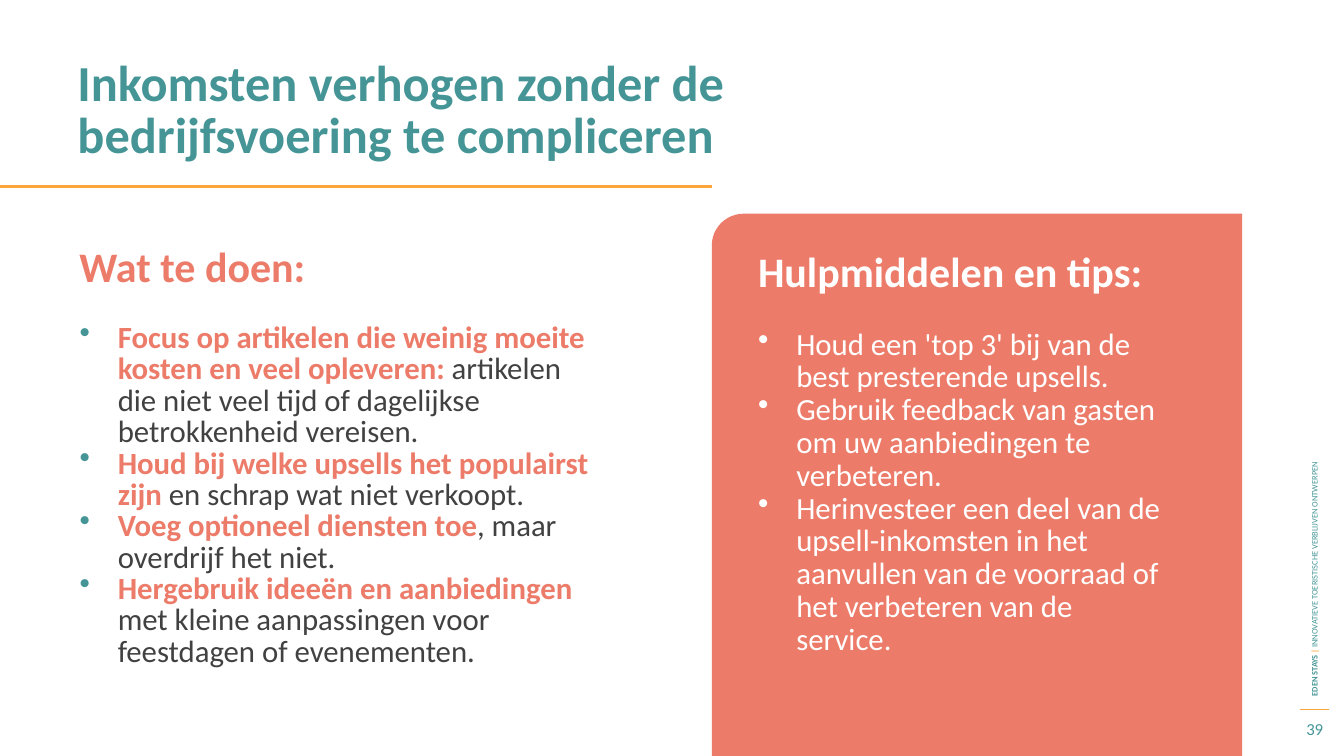
"""Build the slide on raising income without complicating operations."""
from pptx import Presentation
from pptx.dml.color import RGBColor as RGB
from pptx.enum.shapes import MSO_CONNECTOR as Link, MSO_SHAPE as Form
from pptx.enum.text import MSO_ANCHOR as Anchor, PP_ALIGN as Align
from pptx.oxml.ns import qn
from pptx.util import Pt
from lxml.etree import SubElement as sub

PX = 9144
FONT = "Calibri"
TEAL = RGB(0x45, 0x95, 0x97)
CORAL = RGB(0xEC, 0x7C, 0x69)
GOLD = RGB(0xFB, 0xA6, 0x3B)
GREY = RGB(0x41, 0x41, 0x41)
WHITE = RGB(0xFF, 0xFF, 0xFF)

TODOS = [
    ("Focus op artikelen die weinig moeite kosten en veel opleveren: ",
     "artikelen die niet veel tijd of dagelijkse betrokkenheid vereisen."),
    ("Houd bij welke upsells het populairst zijn ",
     "en schrap wat niet verkoopt."),
    ("Voeg optioneel diensten toe", ", maar overdrijf het niet."),
    ("Hergebruik ideeën en aanbiedingen ",
     "met kleine aanpassingen voor feestdagen of evenementen."),
]
TIPS = [
    "Houd een 'top 3' bij van de best presterende upsells.",
    "Gebruik feedback van gasten om uw aanbiedingen te verbeteren.",
    "Herinvesteer een deel van de upsell-inkomsten in het aanvullen "
    "van de voorraad of het verbeteren van de service.",
]


def scale(*nums):
    return [n * PX for n in nums]


def add_rule(slide, x1, x2, y, width):
    rule = slide.shapes.add_connector(Link.STRAIGHT, *scale(x1, y, x2, y))
    rule.line.color.rgb = GOLD
    rule.line.width = Pt(width)
    sub(rule._element.spPr, qn("a:effectLst"))


def add_panel(slide, *box):
    panel = slide.shapes.add_shape(Form.ROUND_1_RECTANGLE, *scale(*box))
    panel.adjustments[0] = 0.06
    panel.rotation = 270
    panel.shadow.inherit = False
    panel.fill.solid()
    panel.fill.fore_color.rgb = CORAL
    panel.line.fill.background()


def add_box(slide, *box, anchor=Anchor.TOP, turn=0):
    shape = slide.shapes.add_textbox(*scale(*box))
    shape.rotation = turn
    frame = shape.text_frame
    frame.word_wrap = True
    frame.vertical_anchor = anchor
    return frame


def add_para(frame, runs, size, lead=None, dot=None):
    first = frame.paragraphs[0]
    para = frame.add_paragraph() if first.runs else first
    if dot is not None:
        props = para._p.get_or_add_pPr()
        props.set("marL", str(38 * PX))
        props.set("indent", str(-38 * PX))
        tint = sub(sub(props, qn("a:buClr")), qn("a:srgbClr"))
        tint.set("val", str(dot))
        sub(props, qn("a:buChar")).set("char", "•")
    if lead:
        para.line_spacing = Pt(lead)
    para.font.name = FONT
    para.font.size = Pt(size)
    for text, color, bold in runs:
        run = para.add_run()
        run.text = text
        run.font.color.rgb = color
        run.font.bold = bold
    return para


def add_margin(slide):
    add_rule(slide, 1289, 1318, 704, 0.75)
    side = add_box(slide, 1015, 402, 577, 20, anchor=Anchor.MIDDLE, turn=270)
    add_para(side, [("EDEN STAYS ", TEAL, True), ("| ", GOLD, True),
                    ("INNOVATIEVE TOERISTISCHE VERBLIJVEN ONTWERPEN", TEAL, False)], 6)
    page = add_box(slide, 1278, 706, 52, 34, anchor=Anchor.MIDDLE)
    add_para(page, [("39", TEAL, False)], 12).alignment = Align.CENTER


def add_todos(slide):
    head = add_box(slide, 69, 243, 614, 88)
    add_para(head, [("Wat te doen:", CORAL, True)], 30, 29)
    body = add_box(slide, 69, 316, 541, 400)
    for key, rest in TODOS:
        add_para(body, [(key, CORAL, True), (rest, GREY, False)], 22, 22.4, TEAL)


def add_tips(slide):
    add_panel(slide, 700, 218, 538, 526)
    body = add_box(slide, 742, 256, 433, 359)
    head = add_para(body, [("Hulpmiddelen en tips:", WHITE, True)], 30, 23.4)
    head.space_after = Pt(23.4)
    for tip in TIPS:
        add_para(body, [(tip, WHITE, False)], 22, 23.4, WHITE)


def main():
    deck = Presentation()
    deck.slide_width, deck.slide_height = scale(1333, 750)
    slide = deck.slides.add_slide(deck.slide_layouts[6])
    add_margin(slide)
    title = add_box(slide, 67, 54, 748, 88)
    add_para(title, [("Inkomsten verhogen zonder de bedrijfsvoering te compliceren",
                      TEAL, True)], 36, 37.2)
    add_rule(slide, 0, 706, 185, 1.5)
    add_todos(slide)
    add_tips(slide)
    deck.save("out.pptx")


if __name__ == "__main__":
    main()
